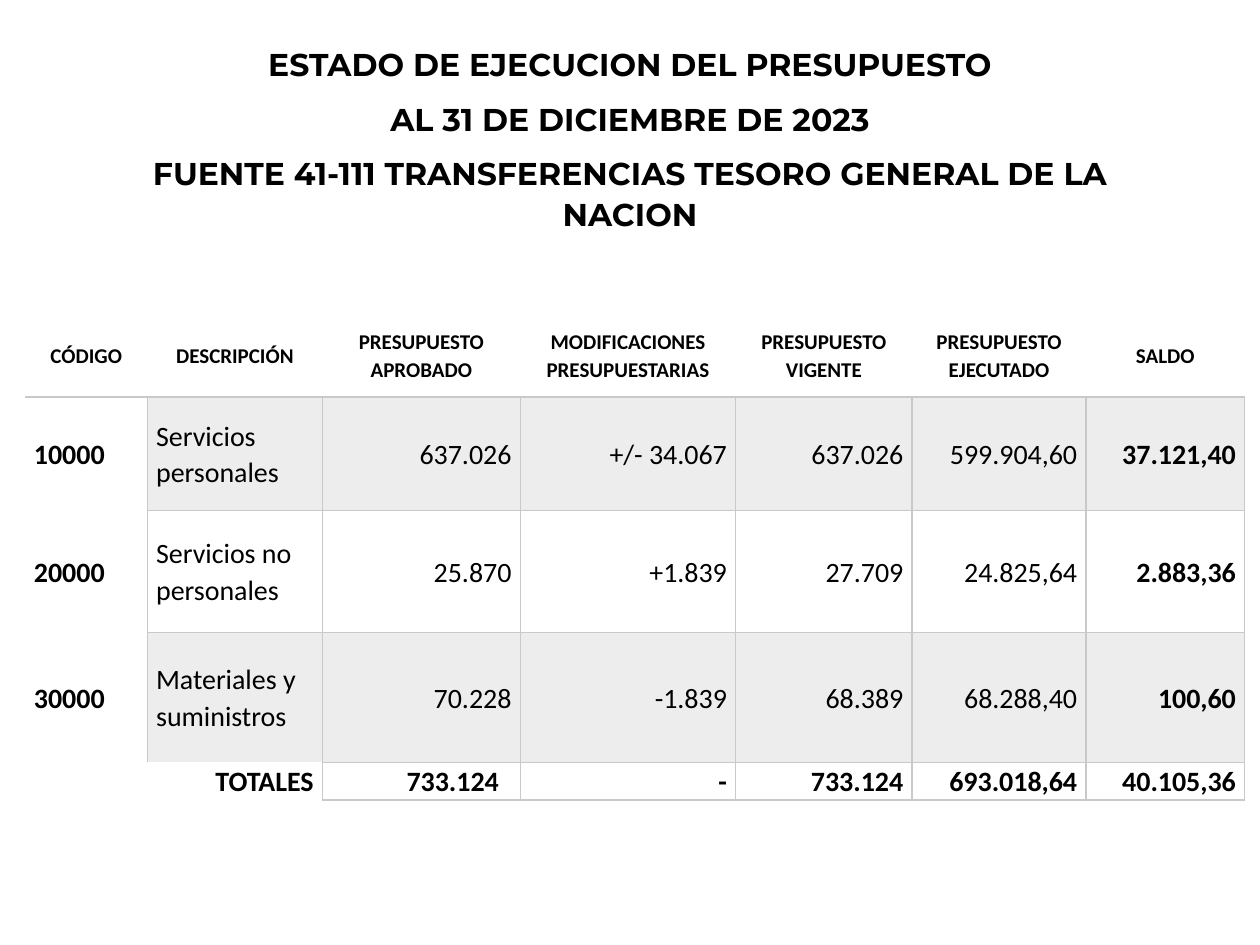
from dataclasses import dataclass

from lxml.etree import SubElement
from pptx import Presentation
from pptx.dml.color import RGBColor
from pptx.enum.text import MSO_ANCHOR, MSO_AUTO_SIZE, PP_ALIGN
from pptx.oxml.ns import qn
from pptx.util import Inches, Pt


@dataclass(frozen=True)
class Theme:
    ink: str = "000000"
    paper: str = "FFFFFF"
    band: str = "EDEDED"
    rule: str = "C9C9C9"
    head: str = "Montserrat"
    body: str = "Calibri"
    title: int = 18
    label: int = 12
    value: int = 16


@dataclass(frozen=True)
class Style:
    font: str
    size: int
    bold: bool
    align: PP_ALIGN


THEME = Theme()
PLAIN = "{2D5ABB26-0587-4C30-8999-92F81FD0307C}"  # No Style, No Grid
TITLE = (
    "ESTADO DE EJECUCION DEL PRESUPUESTO",
    "AL 31 DE DICIEMBRE DE 2023",
    "FUENTE 41-111 TRANSFERENCIAS TESORO GENERAL DE LA NACION",
)
WIDTHS = (0.97, 1.39, 1.57, 1.71, 1.4, 1.38, 1.26)
HEIGHTS = (0.66, 0.9, 0.97, 1.03, 0.3)
ROWS = (
    ("CÓDIGO", "DESCRIPCIÓN", "PRESUPUESTO APROBADO", "MODIFICACIONES PRESUPUESTARIAS",
     "PRESUPUESTO VIGENTE", "PRESUPUESTO EJECUTADO", "SALDO"),
    ("10000", "Servicios personales", "637.026", "+/- 34.067", "637.026", "599.904,60", "37.121,40"),
    ("20000", "Servicios no personales", "25.870", "+1.839", "27.709", "24.825,64", "2.883,36"),
    ("30000", "Materiales y suministros", "70.228", "-1.839", "68.389", "68.288,40", "100,60"),
    ("TOTALES", "", "733.124", "-", "733.124", "693.018,64", "40.105,36"),
)
TOTAL = len(ROWS) - 1
LAST = len(WIDTHS) - 1


def write(frame, lines: tuple[str, ...], style: Style) -> None:
    frame.text = "\n".join(lines)
    for par in frame.paragraphs:
        par.alignment = style.align
        par.line_spacing = 1.07
        par.space_before = Pt(0)
        par.space_after = Pt(8)
        par.font.name = style.font
        par.font.size = Pt(style.size)
        par.font.bold = style.bold
        par.font.color.rgb = RGBColor.from_string(THEME.ink)


def edges(row: int, col: int) -> str:
    """Return the ruled sides of a cell as letters from L, R, T, B."""
    if row == 0:
        return "B"
    if col == 0 and row < TOTAL:
        return "RT" if row == 1 else "R"
    if row == TOTAL and col < 2:
        return "R" if col == 1 else ""
    if row == TOTAL - 1 and col == 1:
        return "LRT"
    return "LRTB"


def border(cell, sides: str) -> None:
    props = cell._tc.get_or_add_tcPr()
    for side in "LRTB":
        line = SubElement(props, qn(f"a:ln{side}"), w=str(Pt(1)))
        if side in sides:
            fill = SubElement(line, qn("a:solidFill"))
            SubElement(fill, qn("a:srgbClr"), val=THEME.rule)
        else:
            SubElement(line, qn("a:noFill"))


def look(row: int, col: int) -> Style:
    if row == 0:
        return Style(THEME.body, THEME.label, True, PP_ALIGN.CENTER)
    left = row < TOTAL and col < 2
    bold = row == TOTAL or col in (0, LAST)
    return Style(THEME.body, THEME.value, bold, PP_ALIGN.LEFT if left else PP_ALIGN.RIGHT)


def draw(cell, row: int, col: int) -> None:
    """Fill, rule and label one table cell."""
    border(cell, edges(row, col))
    band = col > 0 and row < TOTAL and row % 2 == 1
    cell.fill.solid()
    cell.fill.fore_color.rgb = RGBColor.from_string(THEME.band if band else THEME.paper)
    cell.margin_left = Inches(0.07)
    cell.margin_right = Inches(0.17 if (row, col) == (TOTAL, 2) else 0.07)
    cell.margin_top = cell.margin_bottom = 0
    cell.vertical_anchor = MSO_ANCHOR.TOP if row == TOTAL else MSO_ANCHOR.MIDDLE
    write(cell.text_frame, (ROWS[row][col],), look(row, col))


def heading(slide) -> None:
    title = slide.shapes.title
    title.left, title.top = Inches(0.72), Inches(0.29)
    title.width, title.height = Inches(8.56), Inches(1.61)
    frame = title.text_frame
    frame.word_wrap = True
    frame.auto_size = MSO_AUTO_SIZE.NONE
    frame.vertical_anchor = MSO_ANCHOR.TOP
    write(frame, TITLE, Style(THEME.head, THEME.title, True, PP_ALIGN.CENTER))


def budget(slide) -> None:
    table = slide.shapes.add_table(
        len(ROWS), len(WIDTHS), Inches(0.2), Inches(2.49),
        Inches(sum(WIDTHS)), Inches(sum(HEIGHTS))).table
    table.first_row = table.horz_banding = False
    table._tbl.tblPr.find(qn("a:tableStyleId")).text = PLAIN
    for col, width in zip(table.columns, WIDTHS):
        col.width = Inches(width)
    for row, height in zip(table.rows, HEIGHTS):
        row.height = Inches(height)
    for row in range(len(ROWS)):
        for col in range(len(WIDTHS)):
            draw(table.cell(row, col), row, col)
    total = table.cell(TOTAL, 0)
    total.merge(table.cell(TOTAL, 1))
    border_end = total._tc.tcPr.find(qn("a:lnR"))
    border_end.remove(border_end[0])
    fill = SubElement(border_end, qn("a:solidFill"))
    SubElement(fill, qn("a:srgbClr"), val=THEME.rule)


def main() -> None:
    deck = Presentation()
    deck.slide_width, deck.slide_height = Inches(10), Inches(7.5)
    slide = deck.slides.add_slide(deck.slide_layouts[5])
    heading(slide)
    budget(slide)
    deck.save("out.pptx")


if __name__ == "__main__":
    main()
